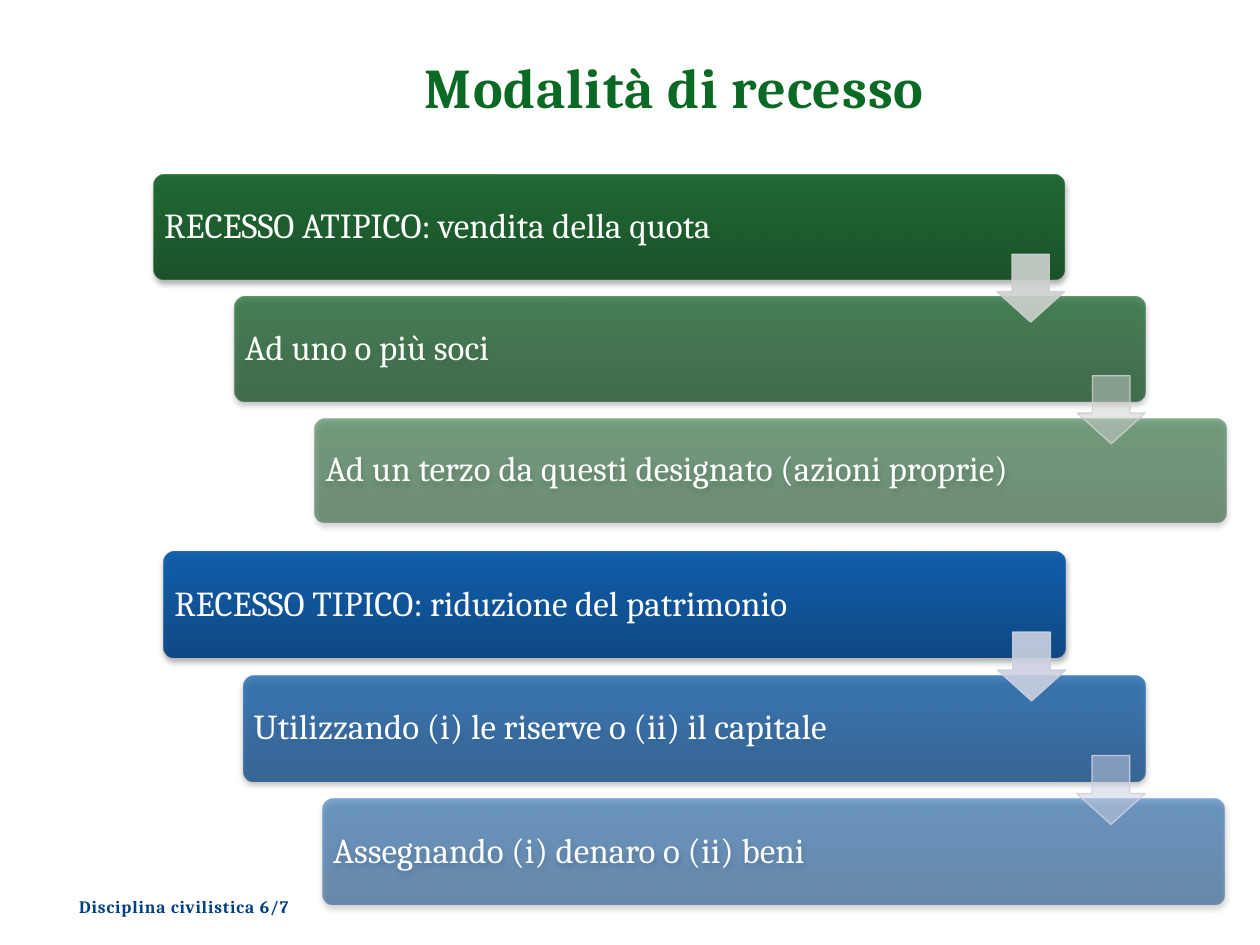
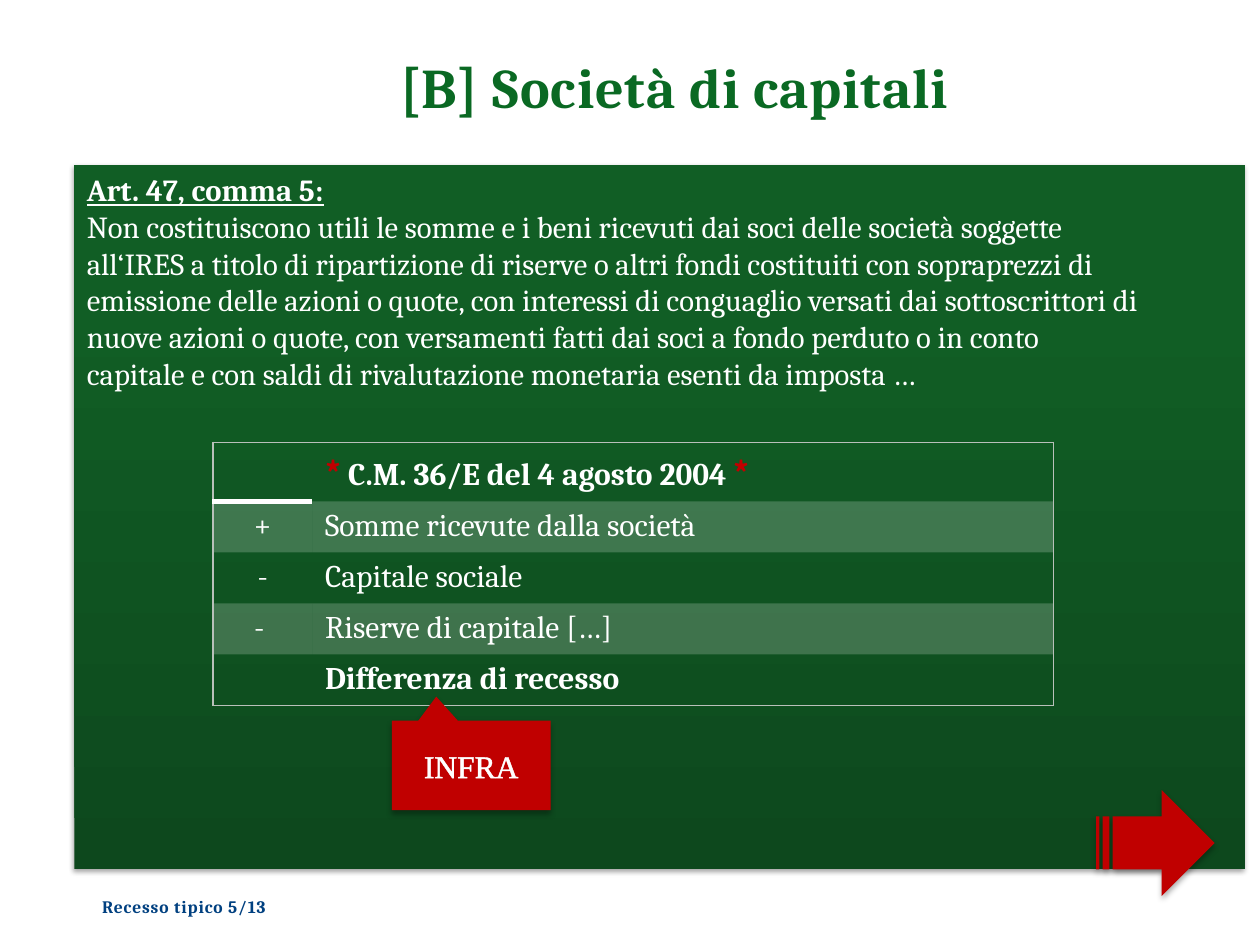
from lxml import etree
from pptx import Presentation
from pptx.dml.color import RGBColor
from pptx.enum.shapes import MSO_SHAPE as Shape
from pptx.enum.text import MSO_ANCHOR as Anchor, PP_ALIGN as Align
from pptx.oxml.ns import qn
from pptx.util import Emu, Inches, Pt

SLIDE_WIDTH, SLIDE_HEIGHT = Inches(10), Inches(7.5)
COLUMNS, ROWS = 100, 75

WHITE = RGBColor(0xFF, 0xFF, 0xFF)
BLACK = RGBColor(0x00, 0x00, 0x00)
TITLE_GREEN = RGBColor(0x0A, 0x69, 0x23)
FOOTER_BLUE = RGBColor(0x00, 0x40, 0x80)
RED = RGBColor(0xC0, 0x00, 0x00)
RULE_GREY = RGBColor(0xB9, 0xC0, 0xBA)
GREEN_ARROW = RGBColor(0xCD, 0xD1, 0xCD)
BLUE_ARROW = RGBColor(0xCC, 0xD1, 0xE2)
GREENS = (RGBColor(0x0D, 0x48, 0x1D), RGBColor(0x11, 0x5E, 0x25), RGBColor(0x10, 0x60, 0x25))
BLUES = (RGBColor(0x00, 0x3F, 0x7F), RGBColor(0x00, 0x52, 0xA5), RGBColor(0x00, 0x53, 0xA5))
GRADIENT_STOPS = (0, 80, 100)

SERIF, SYMBOL_FONT, CALLOUT_FONT = "Cambria", "Noto Sans CJK JP", "Times New Roman"
PLAIN_TABLE = "{2D5ABB26-0587-4C30-8999-92F81FD0307C}"
CARD_OPACITIES = (90, 70, 50)
ARROW_OPACITIES = (90, 50)

ARTICLE_LINES = (
    "Non costituiscono utili le somme e i beni ricevuti dai soci delle società soggette ",
    "all‘IRES a titolo di ripartizione di riserve o altri fondi costituiti con sopraprezzi di ",
    "emissione delle azioni o quote, con interessi di conguaglio versati dai sottoscrittori di ",
    "nuove azioni o quote, con versamenti fatti dai soci a fondo perduto o in conto ",
    "capitale e con saldi di rivalutazione monetaria esenti da imposta …",
)
CALCULATION = (
    ("+", "Somme ricevute dalla società"),
    ("-", "Capitale sociale"),
    ("- ", "Riserve di capitale […]"),
    ("", "Differenza di recesso"),
)


def across(columns):
    """Return the length of a number of grid columns."""
    return Emu(round(SLIDE_WIDTH * columns / COLUMNS))


def down(rows):
    """Return the length of a number of grid rows."""
    return Emu(round(SLIDE_HEIGHT * rows / ROWS))


def place(left, top, width, height):
    """Turn a grid area into slide lengths."""
    return across(left), down(top), across(width), down(height)


def add_element(parent, tag, **attributes):
    """Append a drawing element with its attributes."""
    values = {name: str(value) for name, value in attributes.items()}
    return etree.SubElement(parent, qn(tag), values)


def add_color(parent, color, opacity=100):
    """Append a colour with an opacity in percent."""
    element = add_element(parent, "a:srgbClr", val=color)
    if opacity < 100:
        add_element(element, "a:alpha", val=opacity * 1000)


def set_opacity(parent, opacity):
    """Make the first colour below an element translucent."""
    color = parent.find(".//" + qn("a:srgbClr"))
    add_element(color, "a:alpha", val=opacity * 1000)


def fill_gradient(shape, colors, opacity=100):
    """Fill a shape with a gradient that runs from bottom to top."""
    shape.fill.background()
    empty = shape._element.spPr.find(qn("a:noFill"))
    gradient = etree.Element(qn("a:gradFill"), rotWithShape="1")
    stops = add_element(gradient, "a:gsLst")
    for position, color in zip(GRADIENT_STOPS, colors):
        stop = add_element(stops, "a:gs", pos=position * 1000)
        add_color(stop, color, opacity)
    add_element(gradient, "a:lin", ang=270 * 60000, scaled=0)
    empty.getparent().replace(empty, gradient)


def cast_shadow(shape, blur=3.1, distance=1.8, opacity=35):
    """Give a shape a soft shadow straight below it."""
    effects = shape._element.spPr.find(qn("a:effectLst"))
    shadow = add_element(effects, "a:outerShdw", blurRad=Pt(blur), dist=Pt(distance),
                         dir=90 * 60000, rotWithShape=0)
    add_color(shadow, BLACK, opacity)


def add_shape(page, kind, area, color=None, adjustments=()):
    """Add a flat preset shape without an outline."""
    shape = page.shapes.add_shape(kind, *area)
    shape.shadow.inherit = False
    shape.line.fill.background()
    if color is not None:
        shape.fill.solid()
        shape.fill.fore_color.rgb = color
    for index, value in enumerate(adjustments):
        shape.adjustments[index] = value
    return shape


def add_span(para, text, size=18, color=WHITE, font=SERIF, bold=False,
             underline=False, spacing=0):
    """Add a formatted run of text to a paragraph."""
    span = para.add_run()
    span.text = text
    span.font.name, span.font.size = font, Pt(size)
    span.font.bold, span.font.underline = bold, underline
    span.font.color.rgb = color
    if spacing:
        span.font._element.set("spc", str(round(spacing * 100)))
    return span


def add_label(page, area, text, **text_format):
    """Add one centred line that stands on the bottom of its box."""
    box = page.shapes.add_textbox(*area)
    frame = box.text_frame
    frame.word_wrap, frame.vertical_anchor = True, Anchor.BOTTOM
    para = frame.paragraphs[0]
    para.alignment = Align.CENTER
    add_span(para, text, bold=True, spacing=0.5, **text_format)


def add_page(deck, title, footer):
    """Add a blank page with the shared title and footer."""
    page = deck.slides.add_slide(deck.slide_layouts[6])
    add_label(page, place(11.4, 2.5, 84.3, 7.5), title, size=32, color=TITLE_GREEN)
    add_label(page, place(1.2, 70.6, 26.8, 2.7), footer, size=10, color=FOOTER_BLUE)
    return page


def add_card(page, area, text, colors, opacity):
    """Add a rounded card with its text on the left."""
    card = add_shape(page, Shape.ROUNDED_RECTANGLE, area, adjustments=(0.1,))
    fill_gradient(card, colors, opacity)
    cast_shadow(card)
    frame = card.text_frame
    frame.word_wrap, frame.vertical_anchor = True, Anchor.MIDDLE
    frame.margin_left = frame.margin_right = Inches(0.06)
    para = frame.paragraphs[0]
    para.alignment, para.line_spacing = Align.LEFT, 0.9
    add_span(para, text, size=20)


def add_staircase(page, texts, left, top, width, height, step, colors, arrow_color):
    """Add cards that step down to the right, joined by arrows."""
    step_across, step_down = step
    for index, (text, opacity) in enumerate(zip(texts, CARD_OPACITIES)):
        area = place(left + index * step_across, top + index * step_down, width, height)
        add_card(page, area, text, colors, opacity)
    size = 0.65 * height
    for index, opacity in enumerate(ARROW_OPACITIES):
        right = left + width + index * step_across
        middle = top + index * step_down + (height + step_down) / 2
        arrow = add_shape(page, Shape.DOWN_ARROW,
                          place(right - size, middle - size / 2, size, size),
                          arrow_color, (0.45, 0.55))
        arrow.adjustments[0], arrow.adjustments[1] = 0.55, 0.45
        set_opacity(arrow._element.spPr.find(qn("a:solidFill")), opacity)
        arrow.line.color.rgb = arrow_color
        arrow.line.width = Pt(0.75)
        set_opacity(arrow._element.spPr.find(qn("a:ln")), 90)


def add_article(page):
    """Add the green panel with the text of the article."""
    panel = add_shape(page, Shape.RECTANGLE, place(5.9, 13.1, 92.9, 55.9))
    fill_gradient(panel, GREENS)
    cast_shadow(panel)
    frame = panel.text_frame
    frame.word_wrap, frame.vertical_anchor = True, Anchor.TOP
    heading = frame.paragraphs[0]
    heading.alignment = Align.JUSTIFY
    add_span(heading, "Art. 47, comma 5:", size=17.5, bold=True, underline=True)
    for line in ARTICLE_LINES:
        para = frame.add_paragraph()
        para.alignment = Align.JUSTIFY
        add_span(para, line, size=17.5)


def draw_borders(cell, **borders):
    """Draw cell borders given as side=(colour, width)."""
    properties = cell._tc.get_or_add_tcPr()
    for side in "LRTB":
        if side in borders:
            color, width = borders[side]
            line = add_element(properties, "a:ln" + side, w=Pt(width))
            add_color(add_element(line, "a:solidFill"), color)


def add_calculation(page):
    """Add the table that works out the difference."""
    row_count = len(CALCULATION) + 1
    frame = page.shapes.add_table(row_count, 2, *place(16.9, 35.1, 66.7, 20.9))
    table = frame.table
    table.first_row = table.horz_banding = False
    table._tbl.tblPr.find(qn("a:tableStyleId")).text = PLAIN_TABLE
    table.columns[0].width, table.columns[1].width = across(7.9), across(58.8)
    for index, row in enumerate(table.rows):
        row.height = down(4.05 if index else 4.7)

    heading = table.cell(0, 1).text_frame.paragraphs[0]
    add_span(heading, "* ", color=RED, font=SYMBOL_FONT, bold=True)
    add_span(heading, "C.M. 36/E del 4 agosto 2004 ", bold=True)
    add_span(heading, "*", color=RED, font=SYMBOL_FONT, bold=True)
    for index, (sign, entry) in enumerate(CALCULATION, 1):
        sign_para, entry_para = (cell.text_frame.paragraphs[0] for cell in table.rows[index].cells)
        sign_para.alignment = Align.CENTER
        if sign:
            add_span(sign_para, sign)
        add_span(entry_para, entry, bold=index == row_count - 1)

    thin = (RULE_GREY, 0.75)
    for index, row in enumerate(table.rows):
        for column, cell in enumerate(row.cells):
            borders = {"R" if column else "L": thin}
            if index == 0:
                borders["T"] = thin
                if column == 0:
                    borders["B"] = (WHITE, 3)
            if index == row_count - 1:
                borders["B"] = thin
            draw_borders(cell, **borders)
            if index % 2:
                cell.fill.solid()
                cell.fill.fore_color.rgb = WHITE
                set_opacity(cell._tc.tcPr.find(qn("a:solidFill")), 20)
            else:
                cell.fill.background()


def add_red_shape(page, kind, area, adjustments=()):
    """Add a red marker with its shadow."""
    marker = add_shape(page, kind, area, RED, adjustments)
    cast_shadow(marker, blur=3.5, distance=2.2, opacity=32)
    return marker


def add_callout(page):
    """Add the callout that points at the last table row."""
    callout = add_red_shape(page, Shape.RECTANGULAR_CALLOUT,
                            place(31.1, 57.2, 12.6, 7.1), (-0.22, -0.77))
    callout.text_frame.vertical_anchor = Anchor.MIDDLE
    para = callout.text_frame.paragraphs[0]
    para.alignment = Align.CENTER
    span = add_span(para, "INFRA", font=CALLOUT_FONT)
    outline = etree.Element(qn("a:ln"), w=str(Pt(1.45)))
    add_color(add_element(outline, "a:solidFill"), WHITE)
    span.font._element.insert(0, outline)


def main():
    """Build the deck and save it."""
    deck = Presentation()
    deck.slide_width, deck.slide_height = SLIDE_WIDTH, SLIDE_HEIGHT

    page = add_page(deck, "Modalità di recesso", "Disciplina civilistica 6/7")
    add_staircase(page, ("RECESSO ATIPICO: vendita della quota", "Ad uno o più soci",
                         "Ad un terzo da questi designato (azioni proprie)"),
                  12.2, 13.9, 72.3, 8.3, (6.4, 9.65), GREENS, GREEN_ARROW)
    add_staircase(page, ("RECESSO TIPICO: riduzione del patrimonio",
                         "Utilizzando (i) le riserve o (ii) il capitale",
                         "Assegnando (i) denaro o (ii) beni"),
                  13, 43.8, 71.6, 8.4, (6.3, 9.8), BLUES, BLUE_ARROW)

    page = add_page(deck, "[B] Società di capitali", "Recesso tipico 5/13")
    add_article(page)
    add_calculation(page)
    add_red_shape(page, Shape.STRIPED_RIGHT_ARROW, place(87, 62.7, 9.4, 8.4))
    add_callout(page)
    deck.save("out.pptx")


if __name__ == "__main__":
    main()
